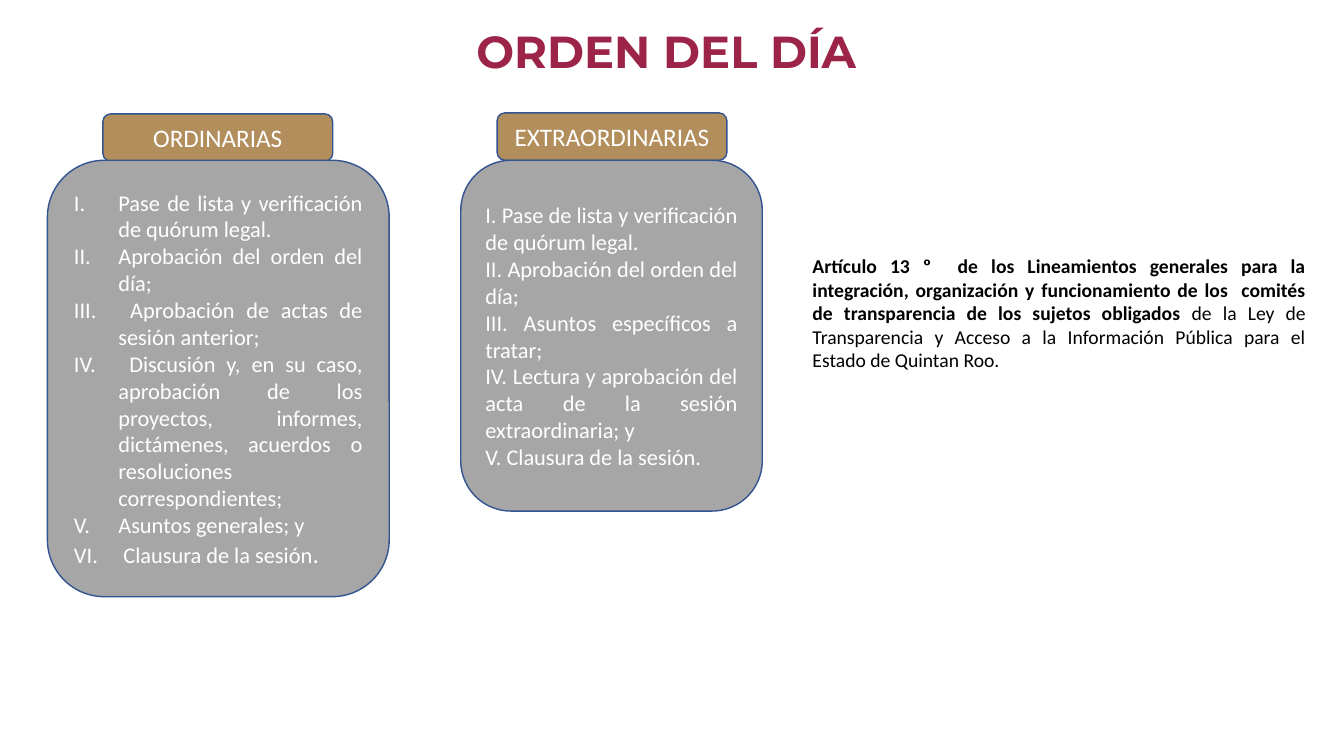
from dataclasses import dataclass

from lxml.etree import SubElement
from pptx import Presentation
from pptx.dml.color import RGBColor
from pptx.enum.shapes import MSO_SHAPE as Preset
from pptx.enum.text import MSO_ANCHOR as Anchor, PP_ALIGN as Align
from pptx.oxml.ns import qn
from pptx.shapes.autoshape import Shape
from pptx.slide import Slide
from pptx.text.text import TextFrame
from pptx.util import Inches, Pt


@dataclass(frozen=True)
class Theme:
    title_color: RGBColor = RGBColor(0x9D, 0x24, 0x49)
    header_fill: RGBColor = RGBColor(0xB3, 0x8E, 0x5D)
    body_fill: RGBColor = RGBColor(0xA6, 0xA6, 0xA6)
    outline: RGBColor = RGBColor(0x32, 0x54, 0x91)
    white: RGBColor = RGBColor(0xFF, 0xFF, 0xFF)
    black: RGBColor = RGBColor(0, 0, 0)
    title_font: str = "Montserrat"
    body_font: str = "Calibri"
    title_size: int = 32
    header_size: int = 18
    item_size: int = 16
    note_size: int = 14


@dataclass(frozen=True)
class Box:
    left: float
    top: float
    width: float
    height: float

    def lengths(self) -> list[Inches]:
        return [Inches(v) for v in (self.left, self.top, self.width, self.height)]


@dataclass(frozen=True)
class Span:
    text: str
    size: int
    color: RGBColor
    bold: bool = False
    font: str = "Calibri"


@dataclass(frozen=True)
class SessionCard:
    heading: str
    header_box: Box
    body_box: Box
    items: list[list[Span]]
    numbered: bool


THEME = Theme()
HEADER_WIDTH, HEADER_HEIGHT, BODY_TOP = 2.28, 0.47, 1.59
NUMBER_INDENT = 0.44


def item(text: str, size: int = THEME.item_size) -> Span:
    return Span(text, size, THEME.white)


CARDS = [
    SessionCard(
        "ORDINARIAS",
        Box(1.02, 1.13, HEADER_WIDTH, HEADER_HEIGHT),
        Box(0.47, BODY_TOP, 3.39, 4.33),
        [
            [item("Pase de lista y verificación de quórum legal.")],
            [item("Aprobación del orden del día;")],
            [item(" Aprobación de actas de sesión anterior; ")],
            [item(" Discusión y, en su caso, aprobación de los proyectos, informes, "
                  "dictámenes, acuerdos o resoluciones correspondientes; ")],
            [item("Asuntos generales; y")],
            [item(" Clausura de la sesión"), item(". ", THEME.header_size)],
        ],
        numbered=True,
    ),
    SessionCard(
        "EXTRAORDINARIAS",
        Box(4.93, 1.12, HEADER_WIDTH, HEADER_HEIGHT),
        Box(4.57, BODY_TOP, 2.99, 3.48),
        [
            [item("I. Pase de lista y verificación de quórum legal.")],
            [item("II. Aprobación del orden del día;")],
            [item("III. Asuntos específicos a tratar;")],
            [item("IV. Lectura y aprobación del acta de la sesión extraordinaria; y")],
            [item("V. Clausura de la sesión.")],
        ],
        numbered=False,
    ),
]

TITLE = Span("ORDEN DEL DÍA", THEME.title_size, THEME.title_color, True, THEME.title_font)
LEGAL_BASIS = [
    Span("Artículo 13 º  de los Lineamientos generales para la integración, organización y "
         "funcionamiento de los  comités de transparencia de los sujetos obligados",
         THEME.note_size, THEME.black, True),
    Span(" de la Ley de Transparencia y Acceso a la Información Pública para el Estado de "
         "Quintan Roo.", THEME.note_size, THEME.black),
]


def write_paragraphs(frame: TextFrame, paragraphs: list[list[Span]], align: Align,
                     anchor: Anchor, numbered: bool = False, spacing: float = 1.0) -> None:
    frame.word_wrap = True
    frame.vertical_anchor = anchor
    for index, spans in enumerate(paragraphs):
        paragraph = frame.add_paragraph() if index else frame.paragraphs[0]
        paragraph.alignment = align
        paragraph.line_spacing = spacing
        if numbered:
            properties = paragraph._p.get_or_add_pPr()
            properties.set("marL", str(Inches(NUMBER_INDENT)))
            properties.set("indent", str(-Inches(NUMBER_INDENT)))
            SubElement(properties, qn("a:buFont"), typeface="+mj-lt")
            SubElement(properties, qn("a:buAutoNum"), type="romanUcPeriod")
        for span in spans:
            run = paragraph.add_run()
            run.text = span.text
            formats = {"name": span.font, "size": Pt(span.size), "bold": span.bold}
            for name, value in formats.items():
                setattr(run.font, name, value)
            run.font.color.rgb = span.color


def add_rounded_box(slide: Slide, box: Box, fill: RGBColor) -> Shape:
    shape = slide.shapes.add_shape(Preset.ROUNDED_RECTANGLE, *box.lengths())
    shape.shadow.inherit = False
    shape.fill.solid()
    shape.fill.fore_color.rgb = fill
    shape.line.color.rgb = THEME.outline
    shape.line.width = Pt(1)
    return shape


def add_card(slide: Slide, card: SessionCard) -> None:
    header = add_rounded_box(slide, card.header_box, THEME.header_fill)
    write_paragraphs(header.text_frame, [[item(card.heading, THEME.header_size)]],
                     Align.CENTER, Anchor.MIDDLE)
    body = add_rounded_box(slide, card.body_box, THEME.body_fill)
    write_paragraphs(body.text_frame, card.items, Align.JUSTIFY, Anchor.MIDDLE, card.numbered)


def main() -> None:
    presentation = Presentation()
    presentation.slide_width = Inches(13.33)
    presentation.slide_height = Inches(7.5)
    slide = presentation.slides.add_slide(presentation.slide_layouts[6])

    title = slide.shapes.add_textbox(*Box(0.86, -0.03, 11.5, 0.85).lengths())
    write_paragraphs(title.text_frame, [[TITLE]], Align.CENTER, Anchor.BOTTOM, spacing=0.9)
    for card in CARDS:
        add_card(slide, card)
    note = slide.shapes.add_textbox(*Box(7.96, 2.47, 5.09, 1.28).lengths())
    write_paragraphs(note.text_frame, [LEGAL_BASIS], Align.JUSTIFY, Anchor.TOP)

    presentation.save("out.pptx")


if __name__ == "__main__":
    main()
